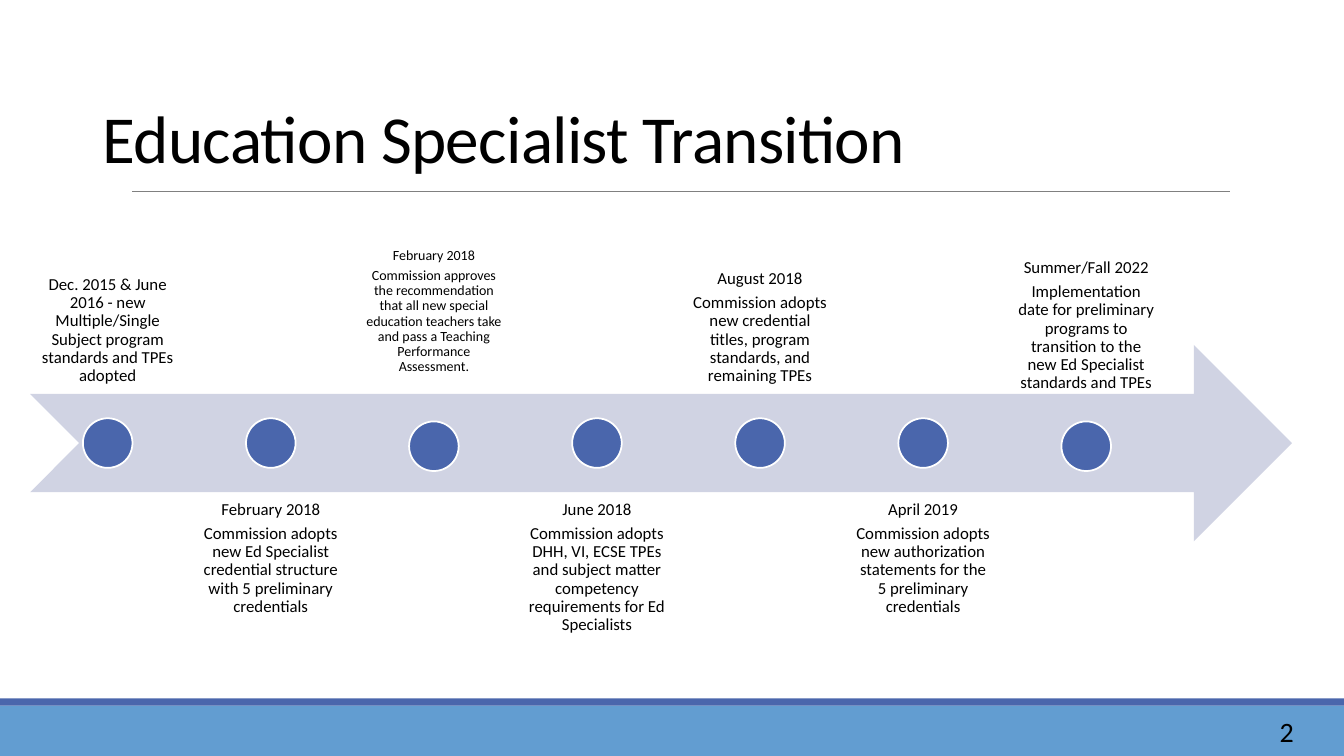
"""Build the Education Specialist Transition timeline slide."""
from lxml.etree import SubElement
from pptx import Presentation
from pptx.dml.color import RGBColor as RGB
from pptx.enum.shapes import MSO_CONNECTOR as LINE, MSO_SHAPE as SHAPE
from pptx.enum.text import MSO_ANCHOR as ANCHOR, PP_ALIGN as ALIGN
from pptx.oxml.ns import qn
from pptx.util import Cm, Pt

COLORS = {"text": "000000", "band": "629DD1", "accent": "4A66AC",
          "rule": "808080", "arrow": "D0D3E3", "edge": "FFFFFF"}
TOP, LOW = (4.98, 4.95), (12.4, 4.95)
STEPS = [
    (TOP, 12, ["Dec. 2015 & June 2016 - new Multiple/Single Subject program "
               "standards and TPEs adopted"]),
    (LOW, 12, ["February 2018", "Commission adopts new Ed Specialist credential "
               "structure with 5 preliminary credentials"]),
    ((4.9, 5.23), 10, ["February 2018", "Commission approves the recommendation that all "
                       "new special education teachers take and pass a Teaching "
                       "Performance Assessment."]),
    (LOW, 12, ["June 2018", "Commission adopts DHH, VI, ECSE TPEs and subject matter "
               "competency requirements for Ed Specialists"]),
    (TOP, 12, ["August 2018", "Commission adopts new credential titles, program "
               "standards, and remaining TPEs"]),
    (LOW, 12, ["April 2019", "Commission adopts new authorization statements for the "
               "5 preliminary credentials"]),
    ((4.9, 5.21), 12, ["Summer/Fall 2022", "Implementation date for preliminary programs to "
                       "transition to the new Ed Specialist standards and TPEs"]),
]

deck = Presentation()
deck.slide_width, deck.slide_height = Cm(33.87), Cm(19.05)
slide = deck.slides.add_slide(deck.slide_layouts[6])
shapes = slide.shapes


def draw(kind, place, fill, edge=None):
    shape = shapes.add_shape(kind, *map(Cm, place))
    shape.shadow.inherit = False
    shape.fill.solid()
    shape.fill.fore_color.rgb = RGB.from_string(COLORS[fill])
    if edge:
        shape.line.color.rgb = RGB.from_string(COLORS[edge])
        shape.line.width = Pt(1.25)
    else:
        shape.line.fill.background()


def write(place, lines, size, frame, para):
    box = shapes.add_textbox(*map(Cm, place)).text_frame
    box.word_wrap = True
    for name, value in frame.items():
        setattr(box, name, value)
    box.text = "\n".join(lines)
    for item in box.paragraphs:
        for name, value in para.items():
            setattr(item, name, value)
        font = item.runs[0].font
        font.name, font.size = "Calibri", Pt(size)
        font.color.rgb = RGB.from_string(COLORS["text"])
    return box


draw(SHAPE.RECTANGLE, (0, 17.78, 33.87, 1.27), "band")
draw(SHAPE.RECTANGLE, (0, 17.6, 33.87, 0.18), "accent")
rule = shapes.add_connector(LINE.STRAIGHT, Cm(3.33), Cm(4.82), Cm(31), Cm(4.82))
rule.line.color.rgb = RGB.from_string(COLORS["rule"])
rule.line.width = Pt(0.5)
SubElement(rule.element.spPr, qn("a:effectLst"))

title = write((2.34, 0.91, 29.21, 3.68), ["Education Specialist Transition"], 48,
              {"vertical_anchor": ANCHOR.BOTTOM}, {"line_spacing": 0.85})
title.paragraphs[0].runs[0].font._element.set("spc", "-50")

draw(SHAPE.NOTCHED_RIGHT_ARROW, (0.76, 8.69, 31.8, 4.95), "arrow")
left, pitch, width, dot = 0.76, 4.11, 3.91, 1.25
for i, ((top, height), size, lines) in enumerate(STEPS):
    x = left + i * pitch
    inset = Cm(0.23 if size == 12 else 0.2)
    frame = {"margin_left": inset, "margin_right": inset, "margin_top": inset,
             "margin_bottom": inset if size == 12 else Cm(0.69),
             "vertical_anchor": ANCHOR.TOP if i % 2 else ANCHOR.BOTTOM}
    text = write((x, top, width, height), lines, size, frame,
                 {"alignment": ALIGN.CENTER, "line_spacing": 0.9})
    for head in text.paragraphs[:-1]:
        head.space_after = Pt(size * 0.35)
    y = 10.62 if top == 4.9 else 10.54
    draw(SHAPE.OVAL, (x + (width - dot) / 2, y, dot, dot), "accent", "edge")

write((32, 17.88, 1.4, 1.12), ["2"], 20, {}, {})
deck.save("out.pptx")
